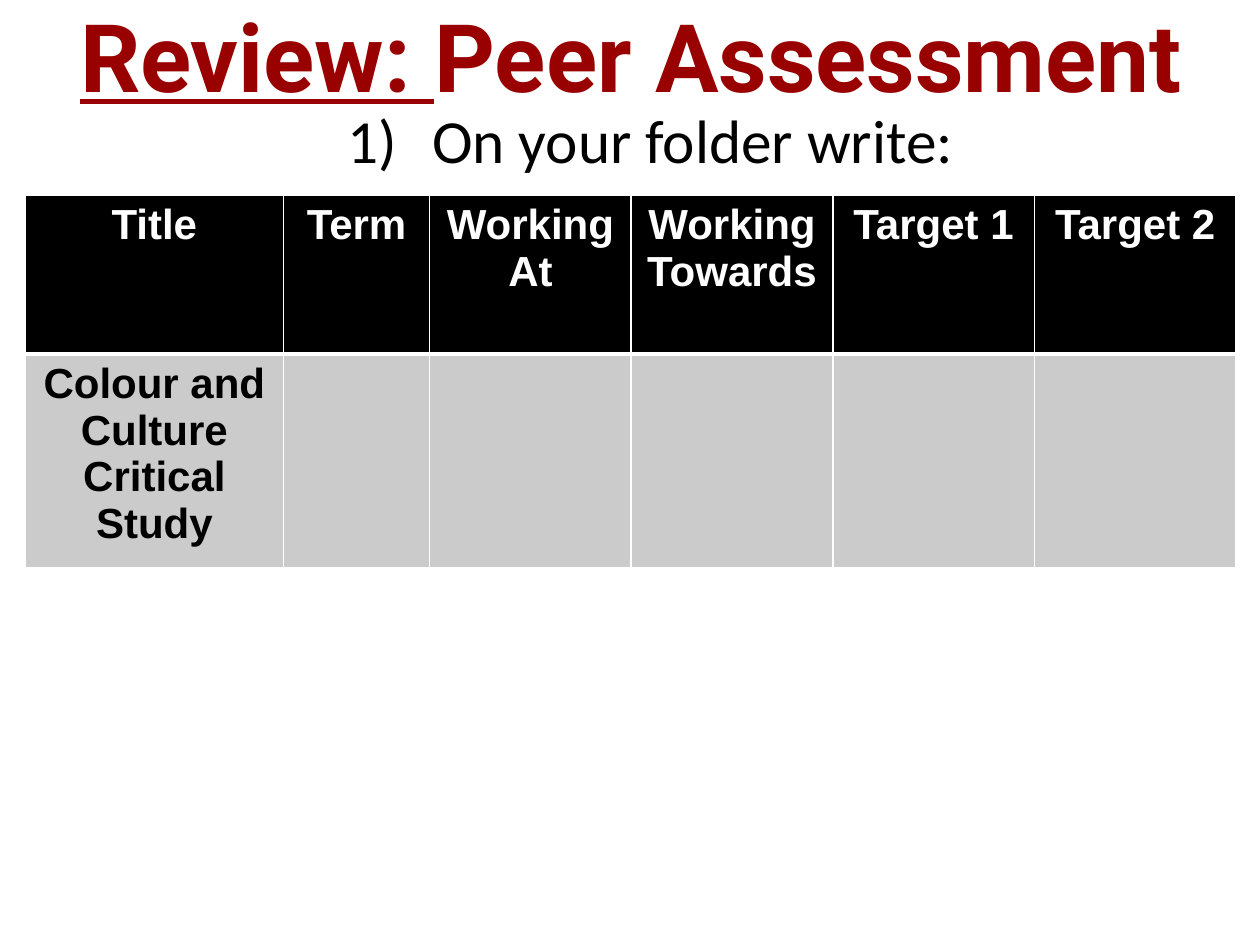
from lxml import etree
from pptx import Presentation
from pptx.dml.color import RGBColor
from pptx.enum import text
from pptx.oxml import ns
from pptx.util import Pt

RED = RGBColor(0x99, 0x00, 0x00)
BLACK = RGBColor(0x00, 0x00, 0x00)
WHITE = RGBColor(0xFF, 0xFF, 0xFF)
GREY = RGBColor(0xCB, 0xCB, 0xCB)

HEADINGS = ["Title", "Term", "Working At", "Working Towards", "Target 1", "Target 2"]
TASK = ["Colour and Culture Critical Study"] + [""] * 5
COL_WIDTHS = [147.6, 83.5] + [115.2] * 4
ROW_HEIGHTS = [90.7, 110.9]


def style(r, font, size, color, bold=False):
    """Format one run."""
    r.font.name, r.font.size, r.font.bold = font, Pt(size), bold
    r.font.color.rgb = color


def place(sp, box):
    """Move a shape to a box given in points."""
    sp.left, sp.top, sp.width, sp.height = (Pt(v) for v in box)


def add_title(s, box):
    """Fill the title placeholder, with its first word underlined."""
    sp = s.shapes.title
    place(sp, box)
    tf = sp.text_frame
    tf.auto_size = text.MSO_AUTO_SIZE.NONE
    tf.vertical_anchor = text.MSO_ANCHOR.MIDDLE
    p = tf.paragraphs[0]
    p.alignment = text.PP_ALIGN.CENTER
    for words, underline in (("Review: ", True), ("Peer Assessment", False)):
        r = p.add_run()
        r.text = words
        style(r, "Roboto", 54, RED, True)
        r.font.underline = underline


def add_instruction(s, box):
    """Add the numbered, centred instruction."""
    tf = s.shapes.add_textbox(*(Pt(v) for v in box)).text_frame
    tf.word_wrap = True
    p = tf.paragraphs[0]
    p.text = "On your folder write:"
    p.alignment = text.PP_ALIGN.CENTER
    style(p.runs[0], "Calibri", 35, BLACK)
    pPr = p._p.get_or_add_pPr()
    pPr.set("marL", str(Pt(48.24)))
    pPr.set("indent", str(-Pt(48.24)))
    etree.SubElement(pPr, ns.qn("a:buFont"), typeface="+mj-lt")
    etree.SubElement(pPr, ns.qn("a:buAutoNum"), type="arabicParenR")


def add_borders(cell, widths):
    """Give a cell white borders from widths by side."""
    tcPr = cell._tc.get_or_add_tcPr()
    for side in "LRTB":
        ln = etree.SubElement(tcPr, ns.qn(f"a:ln{side}"), w=str(Pt(widths.get(side, 1))))
        fill = etree.SubElement(ln, ns.qn("a:solidFill"))
        etree.SubElement(fill, ns.qn("a:srgbClr"), val=str(WHITE))


def add_record_table(s, left, top):
    """Add the assessment record table."""
    rows = [(HEADINGS, BLACK, WHITE, {"B": 3}), (TASK, GREY, BLACK, {"T": 3})]
    table = s.shapes.add_table(len(rows), len(HEADINGS), Pt(left), Pt(top),
                               Pt(sum(COL_WIDTHS)), Pt(sum(ROW_HEIGHTS))).table
    for col, width in zip(table.columns, COL_WIDTHS):
        col.width = Pt(width)
    for i, (words, fill, color, borders) in enumerate(rows):
        table.rows[i].height = Pt(ROW_HEIGHTS[i])
        for j, word in enumerate(words):
            cell = table.cell(i, j)
            add_borders(cell, borders)
            cell.fill.solid()
            cell.fill.fore_color.rgb = fill
            if word:
                p = cell.text_frame.paragraphs[0]
                p.text = word
                p.alignment = text.PP_ALIGN.CENTER
                style(p.runs[0], "Arial", 24, color, True)


def main():
    """Build the slide and save it."""
    prs = Presentation()
    prs.slide_width, prs.slide_height = Pt(720), Pt(540)
    s = prs.slides.add_slide(prs.slide_layouts[5])
    add_title(s, (36.7, -13.7, 648, 90))
    add_instruction(s, (42.5, 54.7, 658.8, 485.3))
    add_record_table(s, 14.4, 111.6)
    prs.save("out.pptx")


if __name__ == "__main__":
    main()
